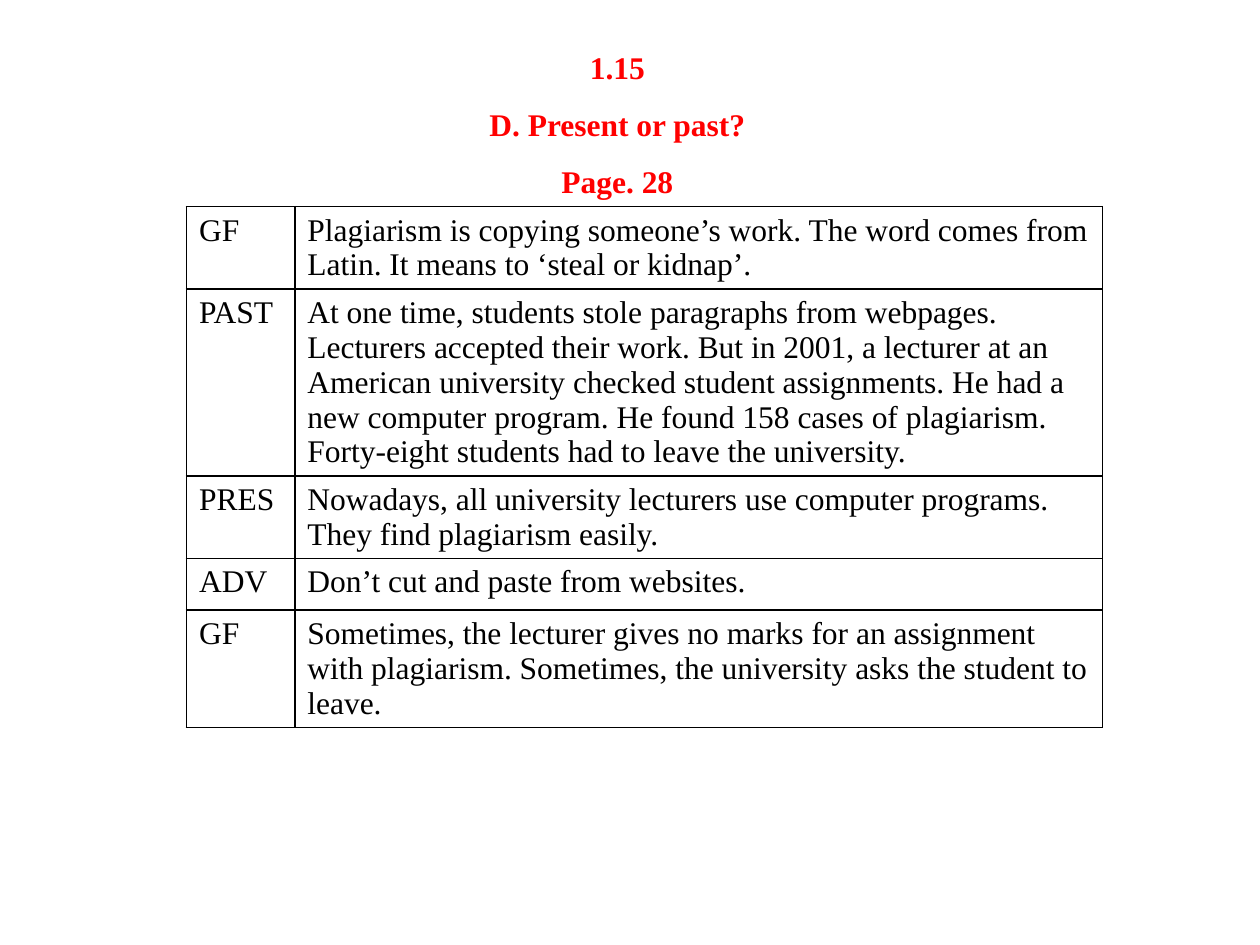
from dataclasses import dataclass
from typing import Any

from lxml.etree import SubElement
from pptx import Presentation
from pptx.dml.color import RGBColor as Rgb
from pptx.enum.text import MSO_ANCHOR as Anchor, MSO_AUTO_SIZE as Auto, PP_ALIGN as Align
from pptx.oxml.ns import qn
from pptx.util import Inches, Pt

HUES = {"head": "FF0000", "ink": "000000", "paper": "FFFFFF"}
HEADS = ["1.15", "D. Present or past?", "Page. 28"]
COLS = [0.086, 0.641]
ROWS = [
    (0.65, "GF", "Plagiarism is copying someone’s work. The word comes from Latin. "
     "It means to ‘steal or kidnap’."),
    (1.48, "PAST", "At one time, students stole paragraphs from webpages. Lecturers accepted "
     "their work. But in 2001, a lecturer at an American university checked student "
     "assignments. He had a new computer program. He found 158 cases of plagiarism. "
     "Forty-eight students had to leave the university."),
    (0.65, "PRES", "Nowadays, all university lecturers use computer programs. "
     "They find plagiarism easily."),
    (0.41, "ADV", "Don’t cut and paste from websites."),
    (0.93, "GF", "Sometimes, the lecturer gives no marks for an assignment with plagiarism. "
     "Sometimes, the university asks the student to leave."),
]


@dataclass
class Deck:
    """Holds the style and current slide; lengths are shares of the slide's size."""
    slide: Any
    wide: int
    high: int
    face: str = "Times New Roman"
    size: int = 18

    def area(self, x, y, w, h):
        return [round(n) for n in (x * self.wide, y * self.high, w * self.wide, h * self.high)]

    def style(self, para, hue, bold=False):
        for run in para.runs:
            font = run.font
            font.name, font.size, font.bold = self.face, Pt(self.size), bold
            font.color.rgb = Rgb.from_string(HUES[hue])

    def title(self, lines, x, y, w, h):
        box = self.slide.shapes.title
        box.left, box.top, box.width, box.height = self.area(x, y, w, h)
        frame = box.text_frame
        frame.auto_size, frame.vertical_anchor = Auto.NONE, Anchor.TOP
        frame.margin_top = frame.margin_bottom = 0
        frame.text = "\n".join(lines)
        for para in frame.paragraphs:
            para.alignment, para.line_spacing = Align.CENTER, Pt(32.6)
            para.space_before = para.space_after = Pt(0)
            self.style(para, "head", True)

    def border(self, cell):
        props = cell._tc.get_or_add_tcPr()
        for at, side in enumerate(("lnL", "lnR", "lnT", "lnB")):
            line = props.makeelement(qn(f"a:{side}"), {"w": str(Pt(1))})
            fill = SubElement(line, qn("a:solidFill"))
            SubElement(fill, qn("a:srgbClr"), val=HUES["ink"])
            props.insert(at, line)

    def table(self, rows, cols, x, y):
        tall = sum(row[0] for row in rows) / 7.5
        spot = self.area(x, y, sum(cols), tall)
        grid = self.slide.shapes.add_table(len(rows), len(cols), *spot).table
        grid.first_row = grid.horz_banding = False
        for col, share in zip(grid.columns, cols):
            col.width = round(share * self.wide)
        for row, (tall, *texts) in zip(grid.rows, rows):
            row.height = Inches(tall)
            for cell, text in zip(row.cells, texts):
                cell.text = text
                cell.fill.solid()
                cell.fill.fore_color.rgb = Rgb.from_string(HUES["paper"])
                self.style(cell.text_frame.paragraphs[0], "ink")
                self.border(cell)


def main():
    show = Presentation()
    show.slide_width, show.slide_height = Inches(10), Inches(7.5)
    deck = Deck(show.slides.add_slide(show.slide_layouts[5]), show.slide_width, show.slide_height)
    deck.title(HEADS, 0.14, 0.03, 0.7, 0.18)
    deck.table(ROWS, COLS, 0.148, 0.2187)
    show.save("out.pptx")


if __name__ == "__main__":
    main()
